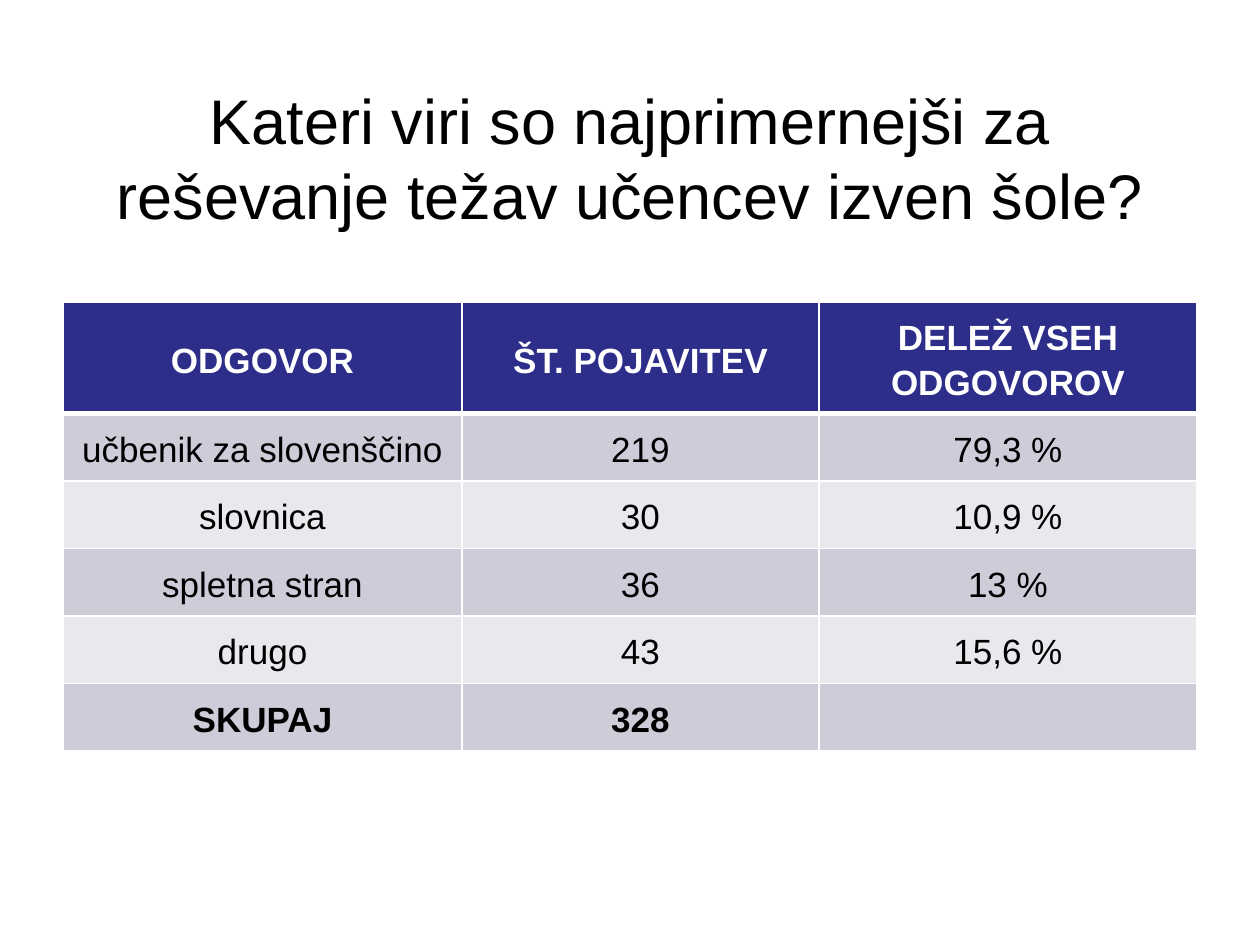
from dataclasses import dataclass

from lxml import etree
from pptx import Presentation
from pptx.dml.color import RGBColor
from pptx.enum.text import MSO_ANCHOR, PP_ALIGN
from pptx.oxml.ns import qn
from pptx.util import Pt

CENTER = PP_ALIGN.CENTER
MIDDLE = MSO_ANCHOR.MIDDLE
BLANK_LAYOUT = 6


@dataclass(frozen=True)
class Theme:
    font: str = "Arial"
    title_size: float = 36
    table_size: float = 20
    text: str = "000000"
    header_text: str = "FFFFFF"
    header_fill: str = "2D2D8A"
    bands: tuple = ("CDCDDA", "E8E8ED")
    border: str = "FFFFFF"
    thin: float = 1
    thick: float = 3


THEME = Theme()

TITLE = "Kateri viri so najprimernejši za reševanje težav učencev izven šole?"
ANSWERS = [
    ("ODGOVOR", "ŠT. POJAVITEV", "DELEŽ VSEH ODGOVOROV"),
    ("učbenik za slovenščino", "219", "79,3 %"),
    ("slovnica", "30", "10,9 %"),
    ("spletna stran", "36", "13 %"),
    ("drugo", "43", "15,6 %"),
    ("SKUPAJ", "328", ""),
]
COLUMN_WIDTHS = (228, 204, 216)
HEADER_HEIGHT, ROW_HEIGHT = 63.3, 38.6


def add_centered_run(paragraph, text, size, color, bold=False):
    paragraph.alignment = CENTER
    run = paragraph.add_run()
    run.text = text
    run.font.name = THEME.font
    run.font.size = Pt(size)
    run.font.bold = bold
    run.font.color.rgb = RGBColor.from_string(color)


def add_title(slide):
    title = slide.shapes.add_textbox(Pt(36), Pt(44.6), Pt(648), Pt(90))
    frame = title.text_frame
    frame.word_wrap = True
    frame.vertical_anchor = MIDDLE
    add_centered_run(frame.paragraphs[0], TITLE, THEME.title_size, THEME.text)


def set_borders(cell, top, bottom):
    """Draw the four cell edges; call before filling, as the schema orders them."""
    properties = cell._tc.get_or_add_tcPr()
    widths = {"a:lnL": THEME.thin, "a:lnR": THEME.thin, "a:lnT": top, "a:lnB": bottom}
    for tag, width in widths.items():
        line = etree.SubElement(properties, qn(tag), w=str(Pt(width)))
        fill = etree.SubElement(line, qn("a:solidFill"))
        etree.SubElement(fill, qn("a:srgbClr"), val=THEME.border)


def format_cell(cell, text, row):
    is_header = row == 0
    is_total = row == len(ANSWERS) - 1
    set_borders(
        cell,
        top=THEME.thick if row == 1 else THEME.thin,
        bottom=THEME.thick if is_header else THEME.thin,
    )
    cell.fill.solid()
    fill = THEME.header_fill if is_header else THEME.bands[(row - 1) % 2]
    cell.fill.fore_color.rgb = RGBColor.from_string(fill)
    cell.margin_left = cell.margin_right = Pt(3.6)
    cell.margin_top = cell.margin_bottom = Pt(0)
    cell.vertical_anchor = MIDDLE
    if text:
        paragraph = cell.text_frame.paragraphs[0]
        paragraph.line_spacing = 1.15
        color = THEME.header_text if is_header else THEME.text
        add_centered_run(paragraph, text, THEME.table_size, color, is_header or is_total)


def add_answer_table(slide):
    height = HEADER_HEIGHT + ROW_HEIGHT * (len(ANSWERS) - 1)
    table = slide.shapes.add_table(
        len(ANSWERS), len(COLUMN_WIDTHS),
        Pt(36), Pt(173), Pt(sum(COLUMN_WIDTHS)), Pt(height),
    ).table
    for column, width in zip(table.columns, COLUMN_WIDTHS):
        column.width = Pt(width)
    for row, answer in enumerate(ANSWERS):
        table.rows[row].height = Pt(ROW_HEIGHT if row else HEADER_HEIGHT)
        for column, text in enumerate(answer):
            format_cell(table.cell(row, column), text, row)


def main():
    presentation = Presentation()
    presentation.slide_width, presentation.slide_height = Pt(720), Pt(540)
    slide = presentation.slides.add_slide(presentation.slide_layouts[BLANK_LAYOUT])
    add_title(slide)
    add_answer_table(slide)
    presentation.save("out.pptx")


if __name__ == "__main__":
    main()
